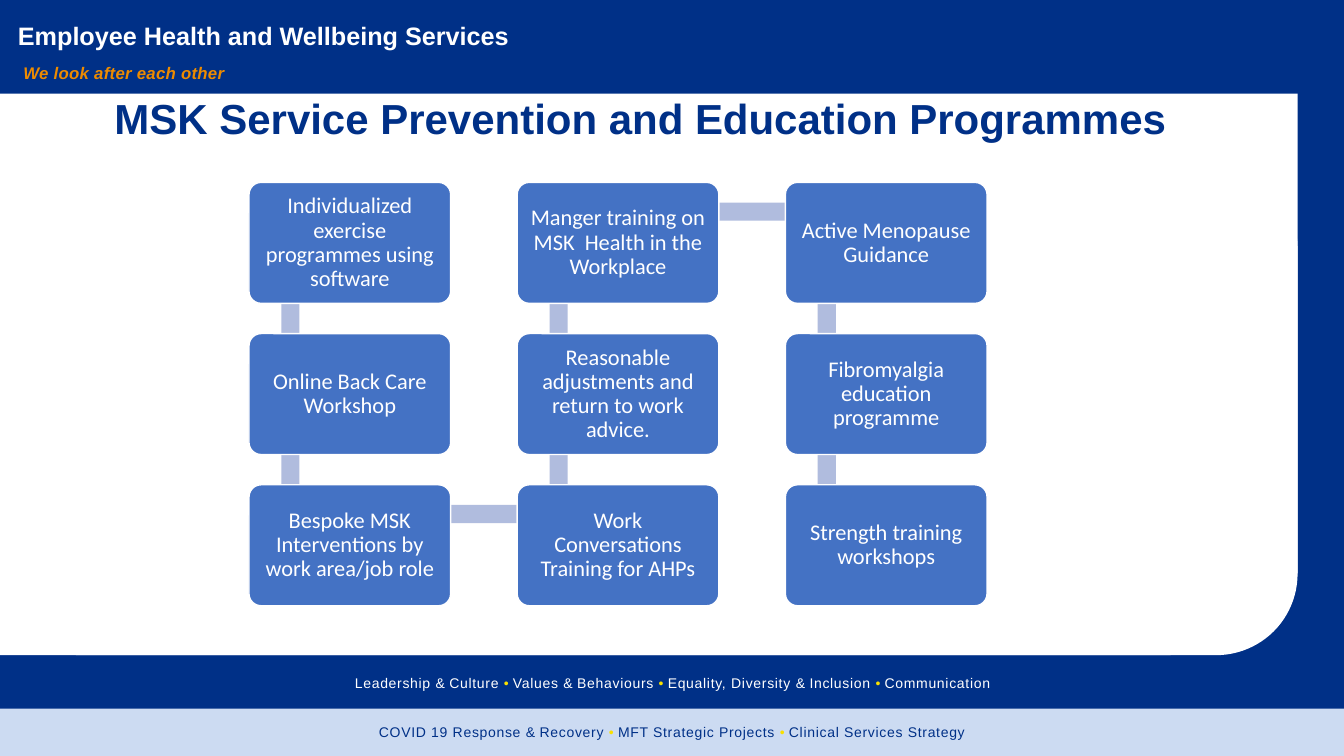
from dataclasses import dataclass

import pptx
import pptx.dml.color
import pptx.enum.shapes
import pptx.enum.text
import pptx.util

Inches = pptx.util.Inches
Pt = pptx.util.Pt
SHAPE = pptx.enum.shapes.MSO_SHAPE
ALIGN = pptx.enum.text.PP_ALIGN
MIDDLE = pptx.enum.text.MSO_ANCHOR.MIDDLE


@dataclass(frozen=True)
class Theme:
    navy: str = "003087"
    white: str = "FFFFFF"
    pale: str = "CCDBF2"
    orange: str = "ED8B00"
    yellow: str = "F9E000"
    node: str = "4472C4"
    link: str = "B0BCDE"
    heading_font: str = "Arial"
    node_font: str = "Calibri"
    title_size: int = 30
    banner_size: int = 18
    node_size: int = 16
    tagline_size: int = 12
    footer_size: int = 10


THEME = Theme()
WIDTH, HEIGHT = 13.33, 7.5

# Each column is listed from top to bottom.
PROGRAMMES = [
    ["Individualized exercise programmes using software",
     "Online Back Care Workshop",
     "Bespoke MSK Interventions by work area/job role"],
    ["Manger training on MSK  Health in the Workplace",
     "Reasonable adjustments and return to work advice.",
     "Work Conversations Training for AHPs"],
    ["Active Menopause Guidance",
     "Fibromyalgia education programme",
     "Strength training workshops"],
]
VALUES = ["Leadership & Culture", "Values & Behaviours",
          "Equality, Diversity & Inclusion", "Communication"]
PROJECTS = ["COVID 19 Response & Recovery", "MFT Strategic Projects",
            "Clinical Services Strategy"]


def rgb(colour):
    return pptx.dml.color.RGBColor.from_string(colour)


def add_block(slide, box, fill, kind=SHAPE.RECTANGLE):
    block = slide.shapes.add_shape(kind, *map(Inches, box))
    block.shadow.inherit = False
    block.fill.solid()
    block.fill.fore_color.rgb = rgb(fill)
    block.line.fill.background()
    return block


def add_run(paragraph, text, colour, tracking=0, **font):
    """Add a run; tracking is its letter spacing in points."""
    run = paragraph.add_run()
    run.text = text
    run.font.color.rgb = rgb(colour)
    for name, value in font.items():
        setattr(run.font, name, value)
    if tracking:
        run._r.get_or_add_rPr().set("spc", str(round(tracking * 100)))


def set_margins(frame, left, top, right, bottom):
    margins = {"margin_left": left, "margin_top": top,
               "margin_right": right, "margin_bottom": bottom}
    for name, value in margins.items():
        setattr(frame, name, Inches(value))


def add_text_box(slide, box, align, margins=(0.1, 0.05, 0.1, 0.05)):
    """Add a wrapping text box and return its first paragraph."""
    frame = slide.shapes.add_textbox(*map(Inches, box)).text_frame
    frame.word_wrap = True
    set_margins(frame, *margins)
    paragraph = frame.paragraphs[0]
    paragraph.alignment = align
    return paragraph


def add_backdrop(slide):
    add_block(slide, (0, 0, WIDTH, HEIGHT), THEME.navy)
    add_block(slide, (0, 0.93, 12.87, 4.76), THEME.white)
    add_block(slide, (0, 1.65, 12.87, 4.85), THEME.white, SHAPE.ROUNDED_RECTANGLE)
    add_block(slide, (0, 1.7, 11.61, 4.8), THEME.white)
    add_block(slide, (0, 7.03, WIDTH, 0.47), THEME.pale)


def add_banner(slide):
    service = add_text_box(slide, (0.08, 0.15, 5.43, 0.4), ALIGN.LEFT)
    add_run(service, "Employee Health and Wellbeing Services", THEME.white,
            name=THEME.heading_font, size=Pt(THEME.banner_size), bold=True)
    tagline = add_text_box(slide, (-1.06, 0.41, 4.63, 0.36), ALIGN.CENTER,
                           (0, 0.01, 0, 0))
    tagline.line_spacing = Pt(29.2)
    add_run(tagline, "We look after each other ", THEME.orange, 0.2,
            name=THEME.heading_font, size=Pt(THEME.tagline_size),
            bold=True, italic=True)


def add_title(slide, box):
    title = add_text_box(slide, box, ALIGN.CENTER)
    title.line_spacing = 0.9
    add_run(title, "MSK Service Prevention and Education Programmes ", THEME.navy,
            name=THEME.heading_font, size=Pt(THEME.title_size), bold=True)


def add_footer(slide, box, topics, colour, margins):
    """Write the topics on one line, parted by yellow bullets."""
    line = add_text_box(slide, box, ALIGN.CENTER, margins)
    tracking = {"&": 0.2, "•": 0.1}
    words = " • ".join(topics).split()
    for position, word in enumerate(words, 1):
        gap = " " if position < len(words) else ""
        add_run(line, word + gap, THEME.yellow if word == "•" else colour,
                tracking.get(word, 0.5),
                name=THEME.heading_font, size=Pt(THEME.footer_size))


def add_node(slide, box, text):
    node = add_block(slide, box, THEME.node, SHAPE.ROUNDED_RECTANGLE)
    node.adjustments[0] = 0.1
    node.line.color.rgb = rgb(THEME.white)
    node.line.width = Pt(1)
    frame = node.text_frame
    frame.word_wrap = True
    frame.vertical_anchor = MIDDLE
    set_margins(frame, 0.08, 0.08, 0.08, 0.08)
    paragraph = frame.paragraphs[0]
    paragraph.alignment = ALIGN.CENTER
    paragraph.line_spacing = 0.9
    add_run(paragraph, text, THEME.white,
            name=THEME.node_font, size=Pt(THEME.node_size))


def add_programme_snake(slide, left, top):
    """Run down the first column, up the second and down the third."""
    node_width, node_height = 2, 1.2
    pitch_x, pitch_y = 2.66, 1.5
    band, inset_x, inset_y = 0.18, 0.41, 0.29

    steps = []
    for column, names in enumerate(PROGRAMMES):
        rows = list(enumerate(names))
        for row, name in rows[::-1] if column % 2 else rows:
            steps.append((left + column * pitch_x, top + row * pitch_y, name))

    for (x1, y1, _), (x2, y2, _) in zip(steps, steps[1:]):
        link_x, link_y = min(x1, x2) + inset_x, min(y1, y2) + inset_y
        if x1 == x2:
            box = (link_x - band / 2, link_y, band, pitch_y)
        else:
            box = (link_x, link_y - band / 2, pitch_x, band)
        add_block(slide, box, THEME.link)
    for x, y, name in steps:
        add_node(slide, (x, y, node_width, node_height), name)


def main():
    deck = pptx.Presentation()
    deck.slide_width, deck.slide_height = Inches(WIDTH), Inches(HEIGHT)
    slide = deck.slides.add_slide(deck.slide_layouts[6])
    add_backdrop(slide)
    add_footer(slide, (1.9, 6.67, 9.54, 0.19), VALUES, THEME.white, (0, 0.02, 0, 0))
    add_footer(slide, (2.71, 7.13, 7.91, 0.35), PROJECTS, THEME.navy,
               (0.1, 0.05, 0.1, 0.05))
    add_banner(slide)
    add_title(slide, (0, 0.93, 12.83, 0.48))
    add_programme_snake(slide, 2.47, 1.81)
    deck.save("out.pptx")


if __name__ == "__main__":
    main()
